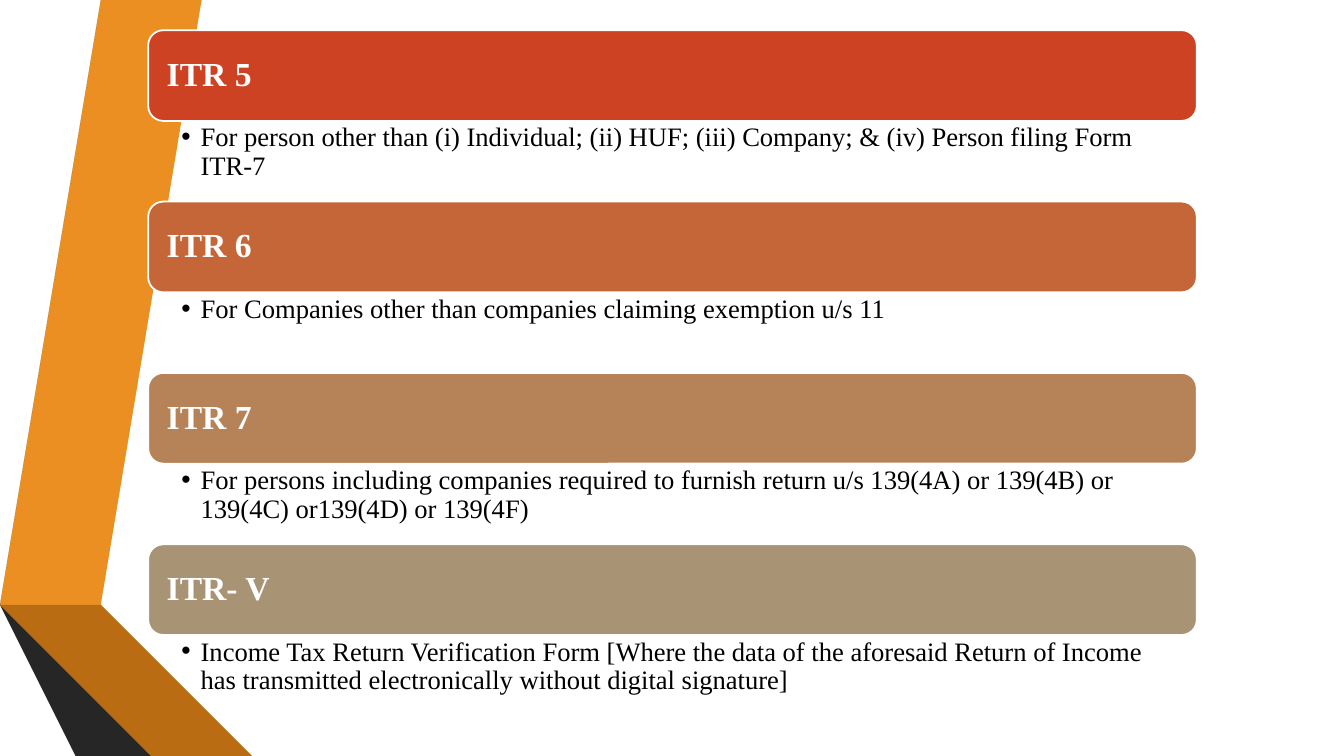
from pptx import Presentation
from pptx import util as u
from pptx.dml.color import RGBColor
from pptx.enum import shapes, text
from pptx.oxml import ns
from lxml import etree

COMPARISON_LAYOUT = 4  # a title and four body placeholders

# Ribbon pieces, back to front: fill and outline in inches
RIBBONS = [
    ("EB8F22", [(0.5, 5.78), (0.77, 5.83), (1.73, 0), (1.45, 0)]),
    ("595959", [(1.39, 0), (1.11, 0), (0.16, 5.73), (0.44, 5.77)]),
    ("262626", [(0.16, 5.73), (1.45, 7.5), (1.51, 7.5)]),
    ("7B480B", [(0.5, 5.79), (2.08, 7.5), (2.14, 7.5)]),
    ("B96C11", [(0.5, 5.79), (2.14, 7.5), (2.83, 7.5), (0.77, 5.83), (0.5, 5.78)]),
    ("404040", [(2.02, 7.5), (0.48, 5.83), (0.43, 5.78), (0.44, 5.77),
                (0.16, 5.73), (1.51, 7.5)]),
]

# Tax return forms: bar fill, heading, description
FORMS = [
    ("CD4223", "ITR 5",
     "For person other than (i) Individual; (ii) HUF; (iii) Company; "
     "& (iv) Person filing Form ITR-7"),
    ("C56639", "ITR 6",
     "For Companies other than companies claiming exemption u/s 11"),
    ("B68358", "ITR 7",
     "For persons including companies required to furnish return u/s 139(4A) "
     "or 139(4B) or 139(4C) or139(4D) or 139(4F)"),
    ("A89374", "ITR- V",
     "Income Tax Return Verification Form [Where the data of the aforesaid "
     "Return of Income has transmitted electronically without digital signature]"),
]

LEFT, TOP, WIDTH = 1.47, 0.3, 10.4
BAR_HEIGHT, BODY_HEIGHT = 0.9, 0.8


def color(hex_string):
    return RGBColor.from_string(hex_string)


class FormSlide:
    font = "Times New Roman"
    heading_size, body_size = 24, 19
    light, dark = "FFFFFF", "000000"

    def __init__(self, presentation):
        layout = presentation.slide_layouts[COMPARISON_LAYOUT]
        self.slide = presentation.slides.add_slide(layout)
        background = self.slide.background.fill
        background.solid()
        background.fore_color.rgb = color(self.light)
        title = self.slide.shapes.title.element
        title.getparent().remove(title)
        self.bodies = list(self.slide.placeholders)

    def paint(self, shape, fill):
        shape.shadow.inherit = False
        shape.fill.solid()
        shape.fill.fore_color.rgb = color(fill)

    def ribbon(self, fill, points):
        builder = self.slide.shapes.build_freeform(*points[0], scale=u.Inches(1))
        builder.add_line_segments(points[1:], close=True)
        shape = builder.convert_to_shape()
        self.paint(shape, fill)
        shape.line.fill.background()

    def add_words(self, shape, words, size, ink, bold, anchor, insets):
        frame = shape.text_frame
        frame.word_wrap = True
        frame.auto_size = text.MSO_AUTO_SIZE.NONE
        frame.vertical_anchor = anchor
        (frame.margin_left, frame.margin_top,
         frame.margin_right, frame.margin_bottom) = map(u.Inches, insets)
        paragraph = frame.paragraphs[0]
        paragraph.alignment = text.PP_ALIGN.LEFT
        paragraph.line_spacing = 0.9
        paragraph.space_before = u.Pt(0)
        run = paragraph.add_run()
        run.text = words
        run.font.name = self.font
        run.font.size = u.Pt(size)
        run.font.bold = bold
        run.font.color.rgb = color(ink)
        return paragraph

    def bar(self, top, fill, heading):
        shape = self.slide.shapes.add_shape(
            shapes.MSO_SHAPE.ROUNDED_RECTANGLE, u.Inches(LEFT), u.Inches(top),
            u.Inches(WIDTH), u.Inches(BAR_HEIGHT))
        self.paint(shape, fill)
        shape.line.color.rgb = color(self.light)
        shape.line.width = u.Pt(1.25)
        self.add_words(shape, heading, self.heading_size, self.light, True,
                       text.MSO_ANCHOR.MIDDLE, (0.14, 0.1, 0.14, 0.1))

    def description(self, top, words):
        body = self.bodies.pop(0)
        body.left, body.top = u.Inches(LEFT), u.Inches(top)
        body.width, body.height = u.Inches(WIDTH), u.Inches(BODY_HEIGHT)
        # Bring the placeholder in front of the ribbons
        body.element.getparent().append(body.element)
        paragraph = self.add_words(body, words, self.body_size, self.dark, False,
                                   text.MSO_ANCHOR.TOP, (0.33, 0.03, 0.15, 0.03))
        # Hanging bullet
        properties = paragraph._p.get_or_add_pPr()
        properties.set("marL", str(u.Inches(0.19)))
        properties.set("indent", str(u.Inches(-0.19)))
        bullet = etree.SubElement(properties, ns.qn("a:buChar"))
        bullet.set("char", "•")


def main():
    presentation = Presentation()
    presentation.slide_width = u.Inches(13.33)
    presentation.slide_height = u.Inches(7.5)
    form_slide = FormSlide(presentation)

    # Folded ribbons on the left
    for fill, points in RIBBONS:
        form_slide.ribbon(fill, points)

    # Heading bars with their descriptions
    for row, (fill, heading, words) in enumerate(FORMS):
        top = TOP + row * (BAR_HEIGHT + BODY_HEIGHT)
        form_slide.bar(top, fill, heading)
        form_slide.description(top + BAR_HEIGHT, words)

    presentation.save("out.pptx")


if __name__ == "__main__":
    main()
